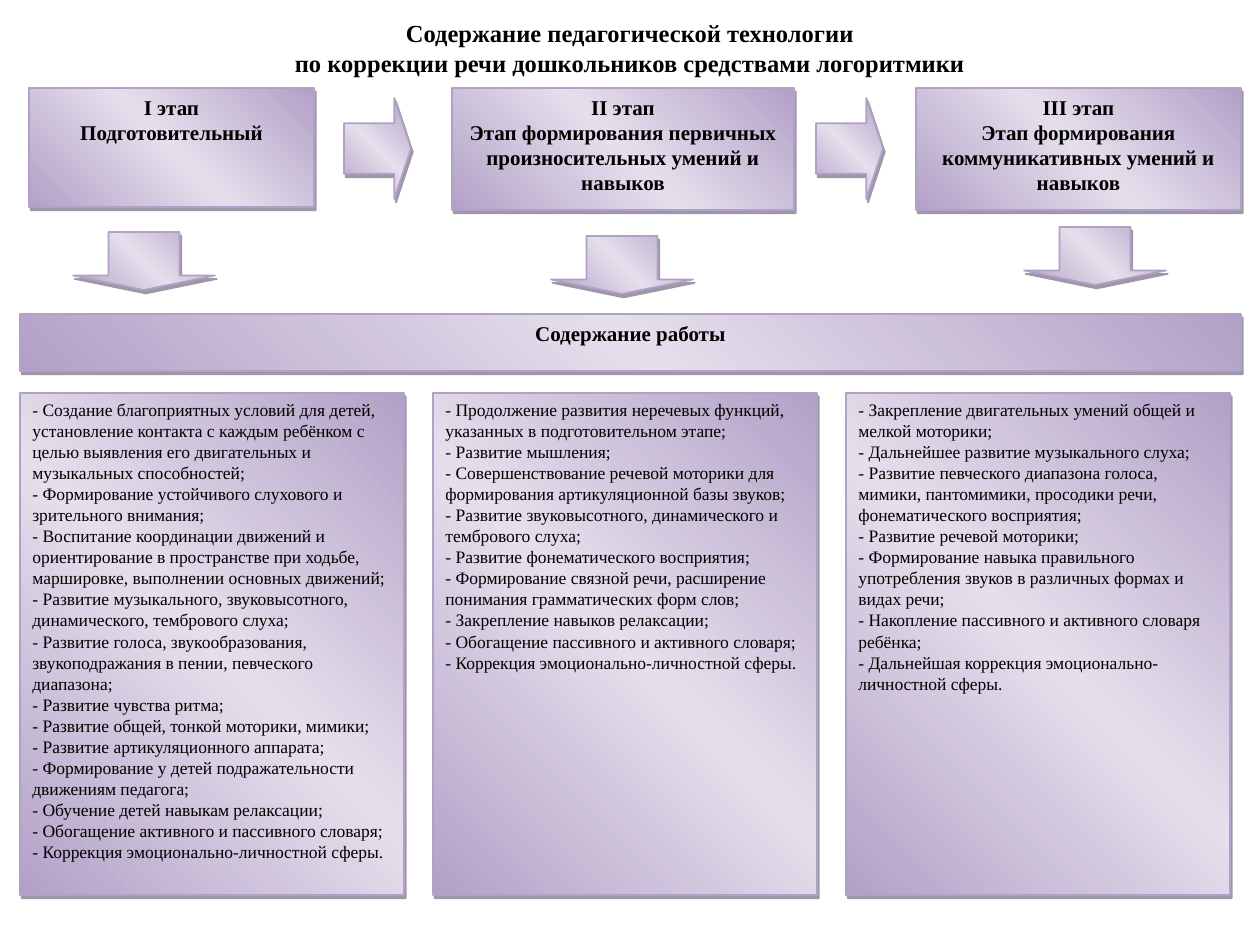
import copy
import pptx
import pptx.util
import pptx.dml.color
import pptx.enum.shapes
import pptx.enum.text
import pptx.oxml
import pptx.oxml.ns

PX = 914400 / 126
DARK, LIGHT, SHADE, BLACK = "B2A1C7", "E5DFEC", "3F3151", "000000"
KIND = pptx.enum.shapes.MSO_SHAPE
ALIGN = pptx.enum.text.PP_ALIGN
TOP = pptx.enum.text.MSO_ANCHOR.TOP
qn = pptx.oxml.ns.qn
rgb = pptx.dml.color.RGBColor.from_string


def block(kind, *box):
    """Add a shape with the lilac gradient, outline and hard shadow."""
    shape = slide.shapes.add_shape(kind, *[round(n * PX) for n in box])
    shape.fill.gradient()
    shape.fill.gradient_angle = 45
    for stop in shape.fill.gradient_stops:
        stop.color.rgb = rgb(DARK)
    props = shape._element.spPr
    first = props.find(".//" + qn("a:gs"))
    first.addnext(copy.deepcopy(first))
    for stop, pos in zip(shape.fill.gradient_stops, (0, 0.5, 1)):
        stop.position = pos
    shape.fill.gradient_stops[1].color.rgb = rgb(LIGHT)
    shape.line.color.rgb = rgb(DARK)
    shape.line.width = pptx.util.Pt(1)
    shape.shadow.inherit = False
    props.find(qn("a:effectLst")).append(pptx.oxml.parse_xml(
        f'<a:outerShdw {pptx.oxml.ns.nsdecls("a")} dist="28000" dir="3780000" '
        f'algn="ctr" rotWithShape="0"><a:srgbClr val="{SHADE}">'
        '<a:alpha val="50000"/></a:srgbClr></a:outerShdw>'))
    return shape


def write(shape, lines, size, bold=True, align=ALIGN.CENTER):
    frame = shape.text_frame
    frame.word_wrap = True
    frame.auto_size = pptx.enum.text.MSO_AUTO_SIZE.NONE
    frame.vertical_anchor = TOP
    for i, line in enumerate(lines):
        para = frame.add_paragraph() if i else frame.paragraphs[0]
        para.alignment = align
        run = para.add_run()
        run.text = line
        run.font.name = "Times New Roman"
        run.font.size = pptx.util.Pt(size)
        run.font.bold = bold
        run.font.color.rgb = rgb(BLACK)


deck = pptx.Presentation()
deck.slide_width = pptx.util.Inches(10)
deck.slide_height = pptx.util.Inches(7.5)
slide = deck.slides.add_slide(deck.slide_layouts[5])

title = slide.shapes.title
title.left, title.top, title.width, title.height = [
    round(n * PX) for n in (0, 12, 1260, 111)]
write(title, ["Содержание педагогической технологии",
              "по коррекции речи дошкольников средствами логоритмики"], 14)

# Stages across the top
stages = [
    (29, 285, 119, "I этап", "Подготовительный"),
    (452, 342, 122, "II этап",
     "Этап формирования первичных произносительных умений и навыков"),
    (916, 325, 122, "III этап",
     "Этап формирования коммуникативных умений и навыков"),
]
for left, width, high, *lines in stages:
    write(block(KIND.RECTANGLE, left, 88, width, high), lines, 12)

for left in (344, 816):
    arrow = block(KIND.RIGHT_ARROW, left, 98, 67, 101)
    arrow.adjustments[1] = 0.25

for left, top in ((73, 232), (551, 236), (1024, 227)):
    arrow = block(KIND.DOWN_ARROW, left, top, 142, 58)
    arrow.adjustments[1] = 0.25

write(block(KIND.RECTANGLE, 20, 314, 1221, 57), ["Содержание работы"], 12)

# Work done at each stage
tasks = [
    ["Создание благоприятных условий для детей, установление контакта с каждым "
     "ребёнком с целью выявления его двигательных и музыкальных способностей;",
     "Формирование устойчивого слухового и зрительного внимания;",
     "Воспитание координации движений и ориентирование в пространстве при "
     "ходьбе, маршировке, выполнении основных движений;",
     "Развитие музыкального, звуковысотного, динамического, тембрового слуха;",
     "Развитие голоса, звукообразования, звукоподражания в пении, певческого "
     "диапазона;",
     "Развитие чувства ритма;",
     "Развитие общей, тонкой моторики, мимики;",
     "Развитие артикуляционного аппарата;",
     "Формирование у детей подражательности движениям педагога;",
     "Обучение детей навыкам релаксации;",
     "Обогащение активного и пассивного словаря;",
     "Коррекция эмоционально-личностной сферы."],
    ["Продолжение развития неречевых функций, указанных в подготовительном этапе;",
     "Развитие мышления;",
     "Совершенствование речевой моторики для формирования артикуляционной базы "
     "звуков;",
     "Развитие звуковысотного, динамического и тембрового слуха;",
     "Развитие фонематического восприятия;",
     "Формирование связной речи, расширение понимания грамматических форм слов;",
     "Закрепление навыков релаксации;",
     "Обогащение пассивного и активного словаря;",
     "Коррекция эмоционально-личностной сферы."],
    ["Закрепление двигательных умений общей и мелкой моторики;",
     "Дальнейшее развитие музыкального слуха;",
     "Развитие певческого диапазона голоса, мимики, пантомимики, просодики "
     "речи, фонематического восприятия;",
     "Развитие речевой моторики;",
     "Формирование навыка правильного употребления звуков в различных формах и "
     "видах речи;",
     "Накопление пассивного и активного словаря ребёнка;",
     "Дальнейшая коррекция эмоционально-личностной сферы."],
]
for i, items in enumerate(tasks):
    panel = block(KIND.RECTANGLE, 20 + 413 * i, 393, 384, 502)
    write(panel, ["- " + item for item in items], 10, False, ALIGN.LEFT)

deck.save("out.pptx")
